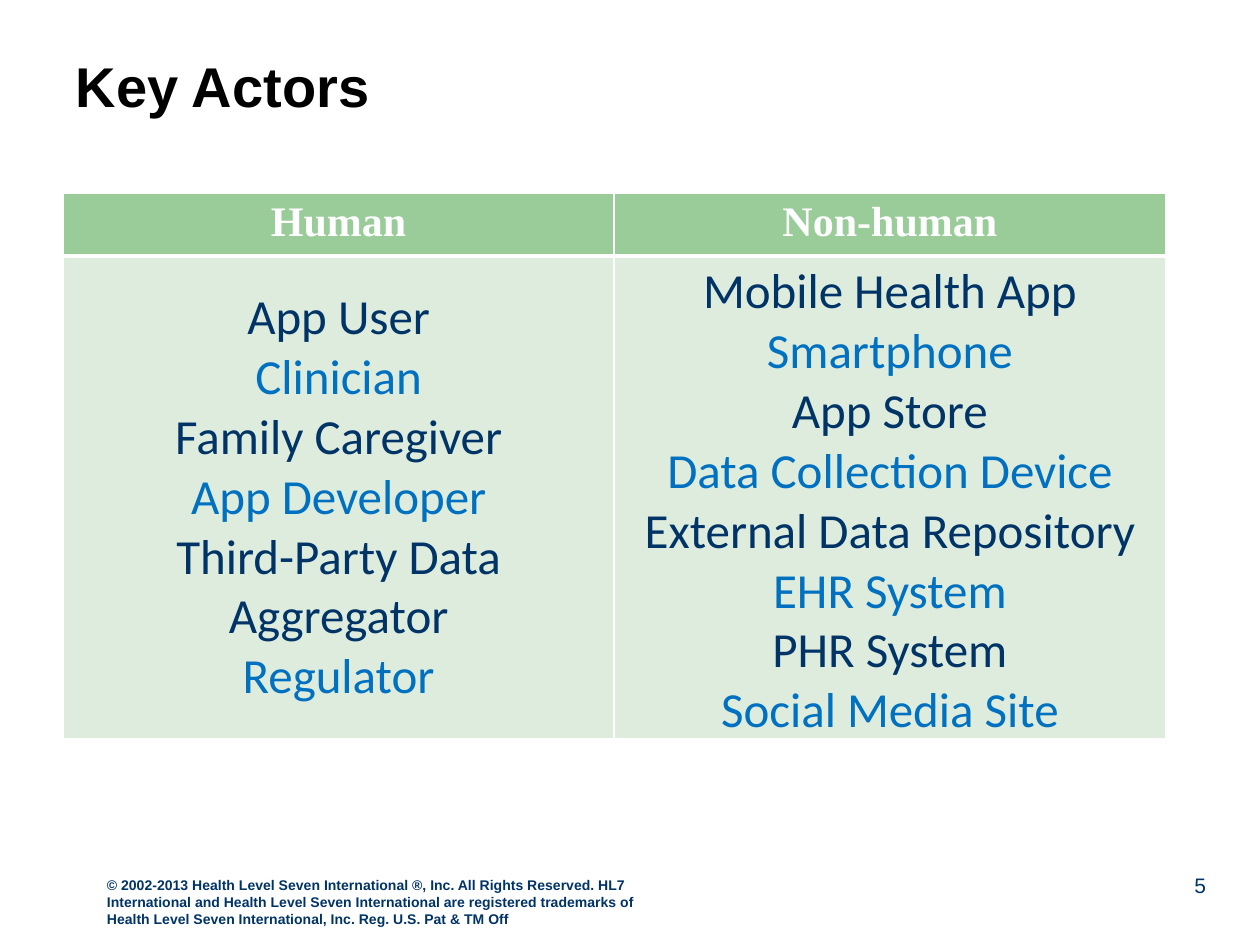
from dataclasses import dataclass
from itertools import cycle

from lxml.etree import SubElement
from pptx import Presentation
from pptx.dml.color import RGBColor as RGB
from pptx.enum.text import MSO_ANCHOR as Anchor, PP_ALIGN as Align
from pptx.oxml.ns import qn
from pptx.util import Inches, Pt


@dataclass(frozen=True)
class Theme:
    black: str = "000000"
    white: str = "FFFFFF"
    navy: str = "003366"
    blue: str = "0070C0"
    header_green: str = "99CC99"
    body_green: str = "DEECDE"
    sans: str = "Arial"
    serif: str = "Times New Roman"
    list_face: str = "Calibri"
    title_size: int = 32
    header_size: int = 24
    list_size: int = 28
    page_size: int = 12
    notice_size: int = 8


THEME = Theme()

ACTORS = {
    "Human": ["App User", "Clinician", "Family Caregiver", "App Developer",
              "Third-Party Data Aggregator", "Regulator"],
    "Non-human": ["Mobile Health App", "Smartphone", "App Store",
                  "Data Collection Device", "External Data Repository",
                  "EHR System", "PHR System", "Social Media Site"],
}
NOTICE = ("© 2002-2013 Health Level Seven International ®, Inc. All Rights Reserved. "
          "HL7 International and Health Level Seven International are registered "
          "trademarks of Health Level Seven International, Inc. Reg. U.S. Pat & TM Off")

# Shared left edge and width of the title and the table, in inches
LEFT, WIDTH = 0.5, 8.75
HEADER_HEIGHT, BODY_HEIGHT = 0.46, 3.76


def box(left, top, width, height):
    return [Inches(length) for length in (left, top, width, height)]


def style(paragraph, face, size, color, bold=False, align=Align.LEFT):
    paragraph.alignment = align
    for run in paragraph.runs:
        run.font.name = face
        run.font.size = Pt(size)
        run.font.bold = bold
        run.font.color.rgb = RGB.from_string(color)


def add_title(slide, text):
    title = slide.shapes.title
    title.left, title.top, title.width, title.height = box(LEFT, 0.25, WIDTH, 0.75)
    frame = title.text_frame
    frame.text = text
    frame.vertical_anchor = Anchor.BOTTOM
    heading = frame.paragraphs[0]
    heading.line_spacing = 0.9
    style(heading, THEME.sans, THEME.title_size, THEME.black, bold=True)


def add_footer(slide, place, text, size, anchor=Anchor.TOP, **look):
    frame = slide.shapes.add_textbox(*place).text_frame
    frame.word_wrap = True
    frame.vertical_anchor = anchor
    frame.text = text
    style(frame.paragraphs[0], THEME.sans, size, THEME.navy, **look)


def set_borders(cell, **widths):
    """Draw white cell edges; widths in points by side L, R, T, B."""
    properties = cell._tc.get_or_add_tcPr()
    for side, width in widths.items():
        edge = SubElement(properties, qn(f"a:ln{side}"), w=str(Pt(width)))
        paint = SubElement(edge, qn("a:solidFill"))
        SubElement(paint, qn("a:srgbClr"), val=THEME.white)


def fill_cell(cell, lines, fill, colors, face, size, bold=False,
              anchor=Anchor.TOP, top=1, bottom=1):
    set_borders(cell, L=1, R=1, T=top, B=bottom)
    cell.fill.solid()
    cell.fill.fore_color.rgb = RGB.from_string(fill)
    cell.vertical_anchor = anchor
    cell.text_frame.text = "\n".join(lines)
    for paragraph, color in zip(cell.text_frame.paragraphs, cycle(colors)):
        style(paragraph, face, size, color, bold, Align.CENTER)


def add_actor_table(slide, actors):
    place = box(LEFT, 1.53, WIDTH, HEADER_HEIGHT + BODY_HEIGHT)
    table = slide.shapes.add_table(2, len(actors), *place).table
    table.rows[0].height = Inches(HEADER_HEIGHT)
    table.rows[1].height = Inches(BODY_HEIGHT)
    for column, (group, names) in enumerate(actors.items()):
        fill_cell(table.cell(0, column), [group], THEME.header_green, [THEME.white],
                  THEME.serif, THEME.header_size, bold=True, bottom=3)
        # Names alternate between the two text colours
        fill_cell(table.cell(1, column), names, THEME.body_green,
                  [THEME.navy, THEME.blue], THEME.list_face, THEME.list_size,
                  anchor=Anchor.MIDDLE, top=3)


def main():
    deck = Presentation()
    deck.slide_width, deck.slide_height = Inches(10), Inches(7.5)
    title_only = deck.slide_layouts[5]
    slide = deck.slides.add_slide(title_only)

    # Page number and copyright notice
    add_footer(slide, box(9, 6.65, 0.67, 0.52), "5", THEME.page_size,
               anchor=Anchor.BOTTOM, align=Align.RIGHT)
    add_footer(slide, box(0.75, 6.91, 4.58, 0.5), NOTICE, THEME.notice_size, bold=True)

    # Heading and actors
    add_title(slide, "Key Actors")
    add_actor_table(slide, ACTORS)

    deck.save("out.pptx")


if __name__ == "__main__":
    main()
